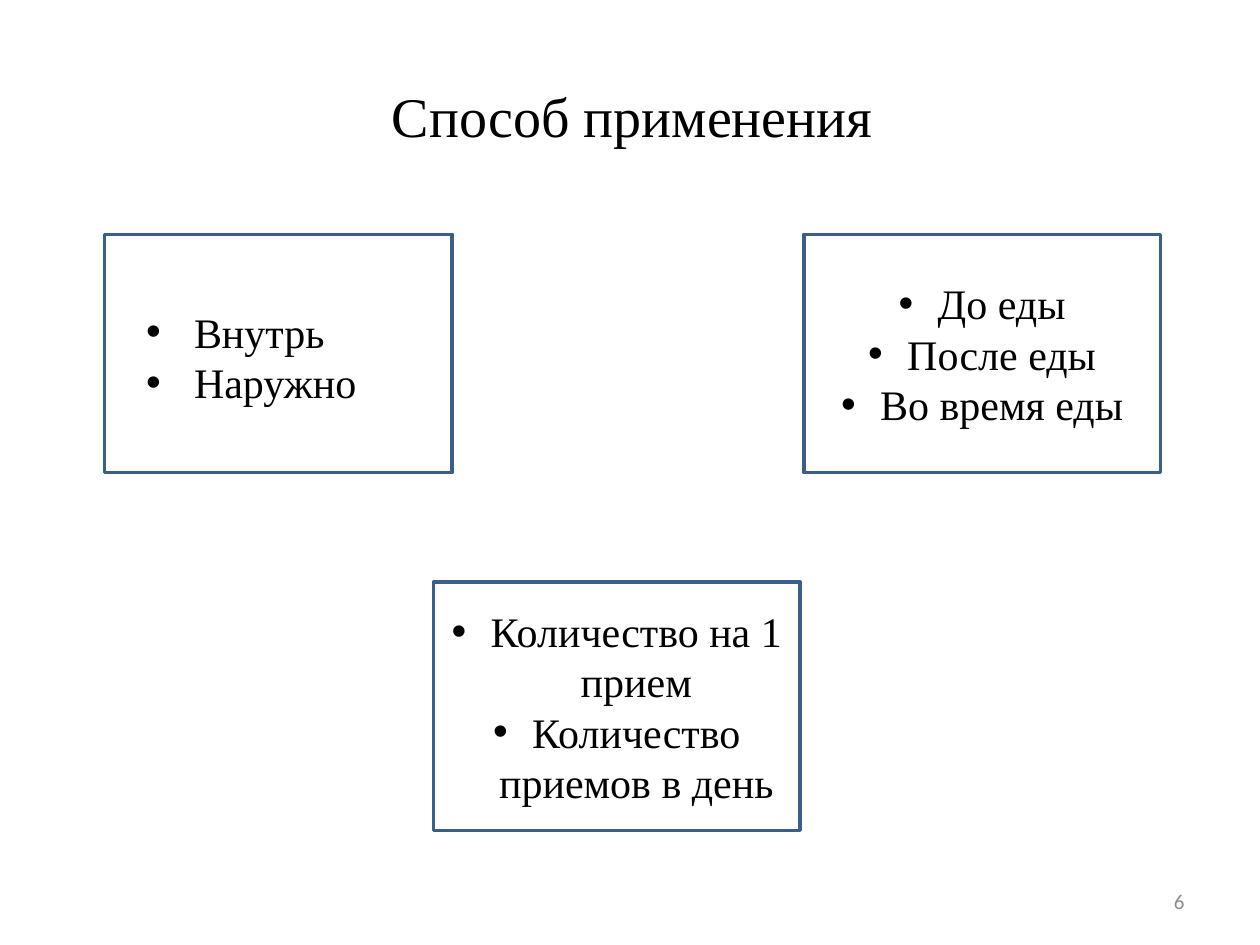
from lxml.etree import SubElement
from pptx import Presentation
from pptx.dml.color import RGBColor
from pptx.enum.shapes import MSO_SHAPE as Shape
from pptx.enum.text import MSO_ANCHOR as Anchor, MSO_AUTO_SIZE as AutoSize, PP_ALIGN as Align
from pptx.oxml.ns import qn
from pptx.util import Inches, Pt

SERIF = "Times New Roman"
BLACK, WHITE, BORDER, GREY = "000000", "FFFFFF", "3A5F8C", "8C8C8C"


def color(hex_code):
    return RGBColor.from_string(hex_code)


def write(holder, lines, size, font, hex_code, align, anchor, indent=0):
    """Fill a shape with formatted lines, bulleted when an indent is given."""
    frame = holder.text_frame
    frame.text = "\n".join(lines)
    frame.word_wrap = True
    frame.auto_size = AutoSize.NONE
    frame.vertical_anchor = anchor
    for paragraph in frame.paragraphs:
        paragraph.alignment = align
        paragraph.space_before = Pt(0)
        run_font = paragraph.runs[0].font
        run_font.name, run_font.size = font, Pt(size)
        run_font.color.rgb = color(hex_code)
        if indent:
            props = paragraph._p.get_or_add_pPr()
            props.set("marL", str(Inches(indent)))
            props.set("indent", str(-Inches(indent)))
            SubElement(props, qn("a:buFont"), typeface="Arial")
            SubElement(props, qn("a:buChar"), char="•")


prs = Presentation()
prs.slide_width, prs.slide_height = Inches(10), Inches(7.5)
slide = prs.slides.add_slide(prs.slide_layouts[1])
title, routes = slide.placeholders

# Title
title.left, title.top, title.width, title.height = map(Inches, (0.67, 0.6, 8.7, 0.64))
write(title, ["Способ применения"], 32, SERIF, BLACK, Align.CENTER, Anchor.TOP)

# Framed boxes: the first one frames the list of routes
TOP_ROW, TOP_HEIGHT = 1.86, 1.89
boxes = [
    ((0.83, TOP_ROW, 2.76, TOP_HEIGHT), []),
    ((6.38, TOP_ROW, 2.83, TOP_HEIGHT), ["До еды", "После еды", "Во время еды"]),
    ((3.44, 4.62, 2.91, 1.97), ["Количество на 1 прием", "Количество приемов в день"]),
]
for place, items in boxes:
    box = slide.shapes.add_shape(Shape.RECTANGLE, *map(Inches, place))
    box.shadow.inherit = False
    box.fill.solid()
    box.fill.fore_color.rgb = color(WHITE)
    box.line.color.rgb = color(BORDER)
    box.line.width = Pt(2)
    if items:
        write(box, items, 24, SERIF, BLACK, Align.CENTER, Anchor.MIDDLE, indent=0.31)

# Routes list, brought in front of its frame
routes.left, routes.top, routes.width, routes.height = map(Inches, (1.06, 2.38, 1.89, 0.91))
write(routes, ["Внутрь", "Наружно"], 24, SERIF, BLACK, Align.LEFT, Anchor.TOP, indent=0.38)
slide.shapes.element.append(routes.element)

# Page number
page_number = slide.shapes.add_textbox(*map(Inches, (7.17, 6.95, 2.33, 0.4)))
write(page_number, ["6"], 12, "Calibri", GREY, Align.RIGHT, Anchor.MIDDLE)

prs.save("out.pptx")
